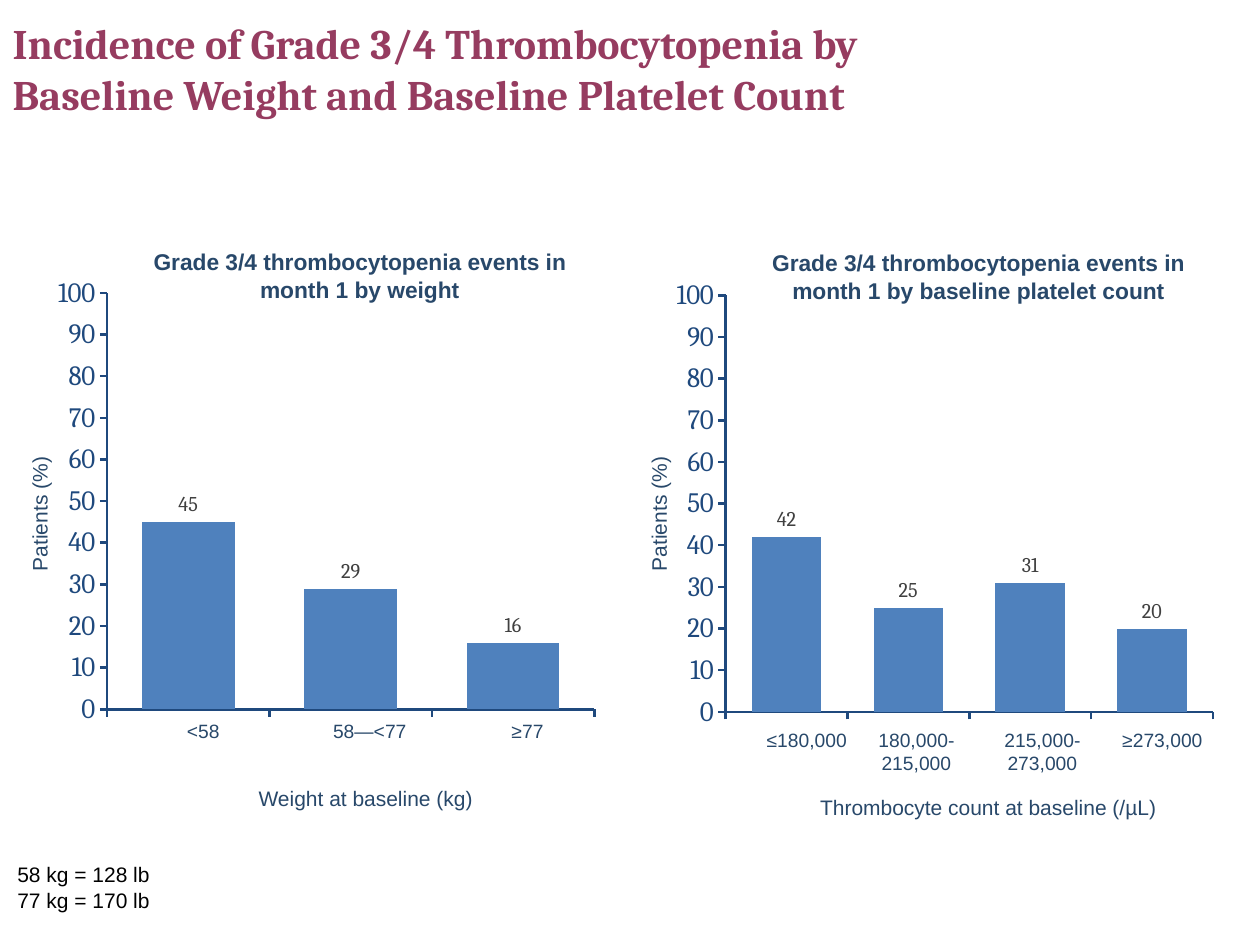
from dataclasses import dataclass
from typing import Any

from pptx import Presentation
from pptx.chart.data import CategoryChartData
from pptx.dml.color import RGBColor
from pptx.enum.chart import XL_CHART_TYPE, XL_LABEL_POSITION, XL_TICK_LABEL_POSITION, XL_TICK_MARK
from pptx.enum.text import MSO_ANCHOR, MSO_AUTO_SIZE, PP_ALIGN
from pptx.oxml import parse_xml
from pptx.oxml.ns import nsdecls
from pptx.util import Cm, Pt

COLUMN_CLUSTERED = XL_CHART_TYPE.COLUMN_CLUSTERED
OUTSIDE_END = XL_LABEL_POSITION.OUTSIDE_END
NO_LABELS = XL_TICK_LABEL_POSITION.NONE
TICK_OUTSIDE, TICK_NONE = XL_TICK_MARK.OUTSIDE, XL_TICK_MARK.NONE
LEFT, CENTER = PP_ALIGN.LEFT, PP_ALIGN.CENTER
TOP = MSO_ANCHOR.TOP
GROW = MSO_AUTO_SIZE.SHAPE_TO_FIT_TEXT
FIXED = MSO_AUTO_SIZE.NONE

COLORS = {
    "title": "963C60",
    "label": "28486A",
    "axis": "1F497D",
    "bar": "4F81BD",
    "value": "404040",
    "black": "000000",
}
TITLE_ONLY = 5
PLOT_AREA = {"x": 0.053, "y": 0.18, "w": 0.934, "h": 0.689}


@dataclass(frozen=True)
class Box:
    left: float
    top: float
    width: float
    height: float


@dataclass(frozen=True)
class Label:
    text: str
    box: Box
    size: float = 11
    color: str = "label"
    bold: bool = False
    alignment: Any = CENTER
    rotation: float = 0
    wrap: bool = True


@dataclass(frozen=True)
class Panel:
    chart_box: Box
    values: tuple[int, ...]
    labels: tuple[Label, ...]


def set_values(target: Any, values: dict[str, Any]) -> None:
    for name, value in values.items():
        setattr(target, name, value)


def format_font(font: Any, name: str, size: float, color: str, bold: bool = False) -> None:
    set_values(font, {"name": name, "size": Pt(size), "bold": bold})
    font.color.rgb = RGBColor.from_string(COLORS[color])


def place(box: Box) -> tuple[Any, ...]:
    return Cm(box.left), Cm(box.top), Cm(box.width), Cm(box.height)


def add_title(slide: Any, text: str, box: Box) -> None:
    title = slide.shapes.title
    set_values(title, dict(zip(("left", "top", "width", "height"), place(box))))
    set_values(title.text_frame, {
        "text": text, "vertical_anchor": TOP, "word_wrap": True, "auto_size": FIXED,
    })
    paragraph = title.text_frame.paragraphs[0]
    paragraph.alignment = LEFT
    format_font(paragraph.runs[0].font, "Cambria", 24, "title", True)


def add_label(slide: Any, label: Label) -> None:
    shape = slide.shapes.add_textbox(*place(label.box))
    shape.rotation = label.rotation
    set_values(shape.text_frame, {
        "text": label.text, "word_wrap": label.wrap, "auto_size": GROW,
    })
    for paragraph in shape.text_frame.paragraphs:
        paragraph.alignment = label.alignment
        format_font(paragraph.runs[0].font, "Arial", label.size, label.color, label.bold)


def format_axis(axis: Any, size: float, values: dict[str, Any]) -> None:
    set_values(axis, {
        "has_major_gridlines": False,
        "major_tick_mark": TICK_OUTSIDE,
        "minor_tick_mark": TICK_NONE,
        **values,
    })
    format_font(axis.tick_labels.font, "Cambria", size, "axis")
    line = axis.format.line
    line.width = Pt(1.5)
    line.color.rgb = RGBColor.from_string(COLORS["axis"])


def fix_plot_area(chart: Any) -> None:
    plot_area = chart.plots[0]._element.getparent()
    for layout in plot_area.findall("{*}layout"):
        plot_area.remove(layout)
    sizes = "".join(f'<c:{key} val="{value}"/>' for key, value in PLOT_AREA.items())
    plot_area.insert(0, parse_xml(
        f'<c:layout {nsdecls("c")}><c:manualLayout><c:layoutTarget val="inner"/>'
        f'<c:xMode val="edge"/><c:yMode val="edge"/>{sizes}</c:manualLayout></c:layout>'
    ))


def add_column_chart(slide: Any, box: Box, values: tuple[int, ...]) -> None:
    data = CategoryChartData()
    data.categories = [str(number) for number in range(1, len(values) + 1)]
    data.add_series("Series 1", values)
    chart = slide.shapes.add_chart(COLUMN_CLUSTERED, *place(box), data).chart
    set_values(chart, {"has_legend": False, "has_title": False})
    format_font(chart.font, "Cambria", 10, "black")
    format_axis(chart.category_axis, 14, {"tick_label_position": NO_LABELS})
    format_axis(chart.value_axis, 16, {
        "minimum_scale": 0, "maximum_scale": 100, "major_unit": 10,
    })
    plot = chart.plots[0]
    set_values(plot, {
        "gap_width": 75, "overlap": -27, "vary_by_categories": False, "has_data_labels": True,
    })
    set_values(plot.data_labels, {"show_value": True, "position": OUTSIDE_END})
    format_font(plot.data_labels.font, "Cambria", 12, "value")
    fill = plot.series[0].format.fill
    fill.solid()
    fill.fore_color.rgb = RGBColor.from_string(COLORS["bar"])
    fix_plot_area(chart)


def heading(text: str, left: float, top: float) -> Label:
    return Label(text, Box(left, top, 10.08, 1.37), size=13, bold=True)


def category_title(text: str, left: float, top: float) -> Label:
    return Label(text, Box(left, top, 9.47, 0.76), size=12)


def value_title(left: float) -> Label:
    return Label("Patients (%)", Box(left, 9.98, 9.37, 0.76), size=12, rotation=270)


PANELS = (
    Panel(Box(1.17, 3.71, 10.95, 12.19), (45, 29, 16), (
        heading("Grade 3/4 thrombocytopenia events in month 1 by weight", 2.21, 4.88),
        value_title(-3.89),
        Label("<58", Box(3.25, 14.38, 1.7, 0.74)),
        Label("58—<77", Box(6.17, 14.38, 2.57, 0.74)),
        Label("≥77", Box(9.68, 14.38, 1.91, 0.74)),
        category_title("Weight at baseline (kg)", 2.64, 15.72),
    )),
    Panel(Box(13.64, 3.76, 10.95, 12.19), (42, 25, 31, 20), (
        heading("Grade 3/4 thrombocytopenia events in month 1 by baseline platelet count", 14.68, 4.9),
        value_title(8.59),
        Label("≤180,000", Box(15.06, 14.55, 2.41, 0.74)),
        Label("180,000-215,000", Box(17.27, 14.55, 2.41, 1.19)),
        Label("215,000-273,000", Box(19.81, 14.55, 2.41, 1.19)),
        Label("≥273,000", Box(22.23, 14.55, 2.41, 0.74)),
        category_title("Thrombocyte count at baseline (/µL)", 15.19, 15.9),
    )),
)
CONVERSIONS = Label("58 kg = 128 lb\n77 kg = 170 lb", Box(0.1, 17.25, 3.2, 1.27),
                    size=12, color="black", alignment=LEFT, wrap=False)


def main() -> None:
    presentation = Presentation()
    set_values(presentation, {"slide_width": Cm(25.4), "slide_height": Cm(19.05)})
    slide = presentation.slides.add_slide(presentation.slide_layouts[TITLE_ONLY])
    add_title(slide, "Incidence of Grade 3/4 Thrombocytopenia by Baseline Weight "
              "and Baseline Platelet Count", Box(0, 0.23, 19.69, 3.33))
    for panel in PANELS:
        add_column_chart(slide, panel.chart_box, panel.values)
        for label in panel.labels:
            add_label(slide, label)
    add_label(slide, CONVERSIONS)
    presentation.save("out.pptx")


if __name__ == "__main__":
    main()
